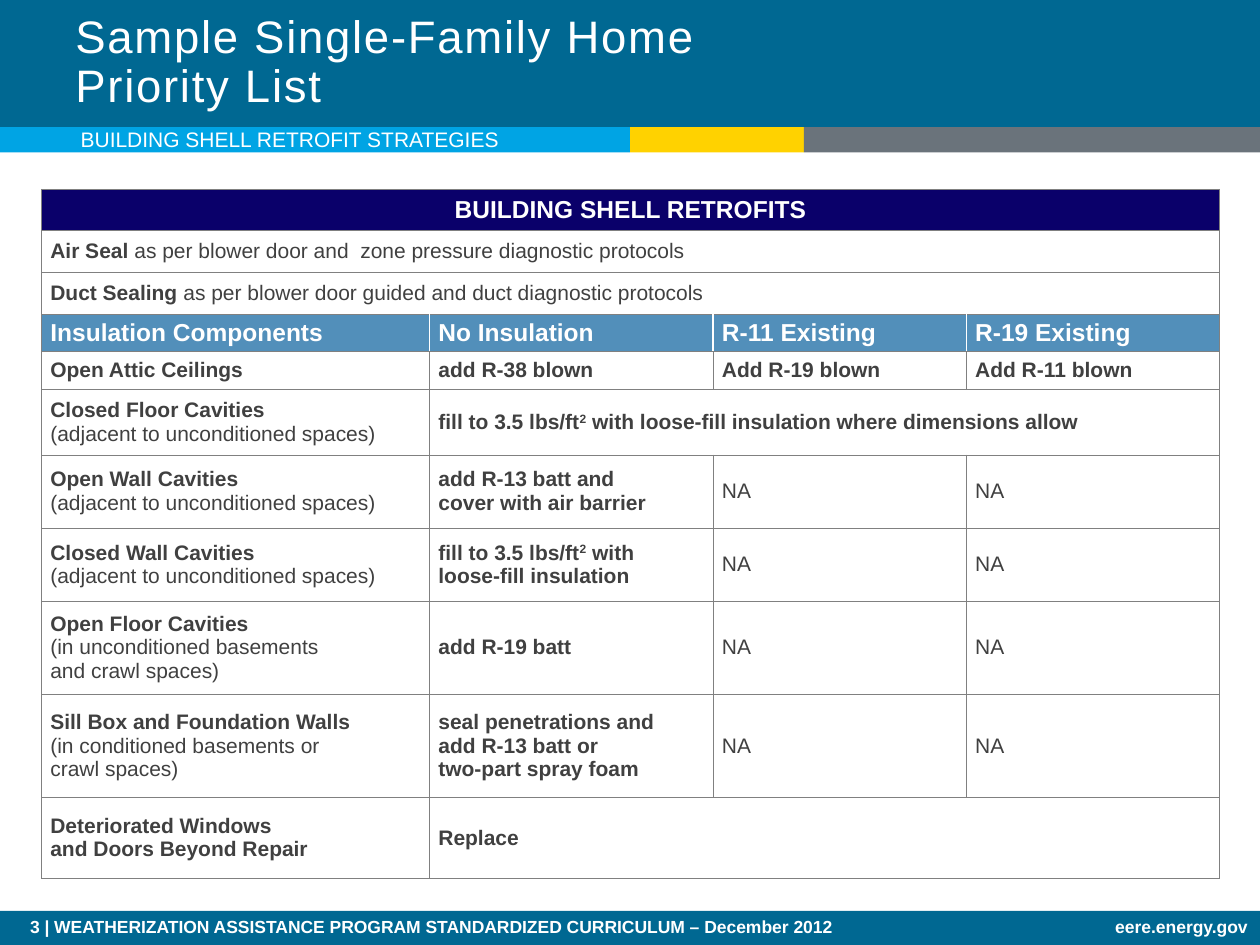
"""Build the sample priority list slide for single-family home retrofits."""
from lxml import etree
from pptx import Presentation
from pptx.dml.color import RGBColor
from pptx.enum import shapes, text
from pptx.oxml.ns import qn
from pptx.util import Inches, Pt

TEAL = RGBColor(0x00, 0x68, 0x92)
CYAN = RGBColor(0x00, 0xA4, 0xE4)
GOLD = RGBColor(0xFF, 0xD2, 0x00)
SLATE = RGBColor(0x6A, 0x73, 0x7B)
NAVY = RGBColor(0x0A, 0x00, 0x6A)
BLUE = RGBColor(0x52, 0x8F, 0xBA)
GRAY = RGBColor(0x80, 0x80, 0x80)
INK = RGBColor(0x40, 0x40, 0x40)
WHITE = RGBColor(0xFF, 0xFF, 0xFF)

COLS = [3.08, 2.25, 2.01, 2.01]
HEAD = 3
ROWS = [
    (0.33, ["*BUILDING SHELL RETROFITS*"]),
    (0.33, ["*Air Seal *as per blower door and  zone pressure diagnostic protocols"]),
    (0.33, ["*Duct Sealing *as per blower door guided and duct diagnostic protocols"]),
    (0.3, ["*Insulation Components*", "*No Insulation*", "*R-11 Existing*", "*R-19 Existing*"]),
    (0.3, ["*Open Attic Ceilings*", "*add R-38 blown*", "*Add R-19 blown*", "*Add R-11 blown*"]),
    (0.52, ["*Closed Floor Cavities*\v(adjacent to unconditioned spaces)",
            "*fill to 3.5 lbs/ft^2^ with loose-fill insulation where dimensions allow*"]),
    (0.58, ["*Open Wall Cavities*\n(adjacent to unconditioned spaces)",
            "*add R-13 batt and\vcover with air barrier*", "NA", "NA"]),
    (0.58, ["*Closed Wall Cavities*\n(adjacent to unconditioned spaces)",
            "*fill to 3.5 lbs/ft^2^ with\vloose-fill insulation*", "NA", "NA"]),
    (0.74, ["*Open Floor Cavities*\n(in unconditioned basements\vand crawl spaces)",
            "*add R-19 batt*", "NA", "NA"]),
    (0.82, ["*Sill Box and Foundation Walls*\n(in conditioned basements or\vcrawl spaces)",
            "*seal penetrations and\vadd R-13 batt or\vtwo-part spray foam*", "NA", "NA"]),
    (0.64, ["*Deteriorated Windows\vand Doors Beyond Repair*", "*Replace*"]),
]


def style(run, size, color, bold=False):
    """Set the font of a run."""
    font = run.font
    font.name, font.size, font.bold = "Arial", Pt(size), bold
    font.color.rgb = color


def add_bar(slide, left, top, width, height, color):
    """Add a plain filled bar."""
    bar = slide.shapes.add_shape(
        shapes.MSO_SHAPE.RECTANGLE, *map(Inches, (left, top, width, height)))
    bar.shadow.inherit = False
    bar.fill.solid()
    bar.fill.fore_color.rgb = color
    bar.line.fill.background()


def add_label(slide, words, place, size, bold=False, middle=False):
    """Add a white text box and return it."""
    box = slide.shapes.add_textbox(*map(Inches, place))
    frame = box.text_frame
    frame.word_wrap = True
    frame.text = words
    if middle:
        frame.vertical_anchor = text.MSO_ANCHOR.MIDDLE
    style(frame.paragraphs[0].runs[0], size, WHITE, bold)
    return box


def add_title(slide):
    """Add the slide title with open letter spacing."""
    box = add_label(slide, "Sample Single-Family Home Priority List",
                    (0.5, 0, 5.83, 1), 26, middle=True)
    para = box.text_frame.paragraphs[0]
    para.line_spacing = Pt(28)
    para.runs[0].font._element.set("spc", "100")


def add_foot(slide, words, place, align):
    """Add a footer text."""
    para = add_label(slide, words, place, 10, bold=True).text_frame.paragraphs[0]
    para.alignment, para.line_spacing = align, 0.9


def write(para, markup, size, color):
    """Write markup, with * for bold, ^ for superscript and \\v for a break."""
    bold = False
    for i, part in enumerate(markup.split("*")):
        bold = i % 2 == 1
        for j, piece in enumerate(part.split("^")):
            for k, line in enumerate(piece.split("\v")):
                if k:
                    para.add_line_break()
                if line:
                    run = para.add_run()
                    run.text = line
                    style(run, size, color, bold)
                    if j % 2:
                        run.font._element.set("baseline", "30000")


def edge(cell, side, color, width):
    """Draw one border of a cell."""
    line = etree.SubElement(cell._tc.get_or_add_tcPr(), qn("a:ln" + side), w=str(Pt(width)))
    fill = etree.SubElement(line, qn("a:solidFill"))
    etree.SubElement(fill, qn("a:srgbClr"), val=str(color))


def dress(cell, row, col):
    """Set the borders, fill and margins of a cell."""
    last = len(COLS) - 1
    for side in "LRTB":
        inner = (side == "L" and col > 0) or (side == "R" and col < last)
        edge(cell, side, *((WHITE, 1) if row == HEAD and inner else (GRAY, 0.25)))
    shade = {0: NAVY, HEAD: BLUE}.get(row)
    if shade is None:
        cell.fill.background()
    else:
        cell.fill.solid()
        cell.fill.fore_color.rgb = shade
    cell.margin_left = cell.margin_right = Inches(0.07)
    cell.margin_top = cell.margin_bottom = 0
    cell.vertical_anchor = text.MSO_ANCHOR.MIDDLE


def fill_cell(cell, row, markup):
    """Write the paragraphs of a cell."""
    size, color = (14, WHITE) if row in (0, HEAD) else (12, INK)
    frame = cell.text_frame
    for i, words in enumerate(markup.split("\n")):
        para = frame.add_paragraph() if i else frame.paragraphs[0]
        if row == 0:
            para.alignment = text.PP_ALIGN.CENTER
        write(para, words, size, color)


def add_grid(slide):
    """Add the table of retrofits, its last given cell spanning the rest of a row."""
    height = sum(high for high, _ in ROWS)
    grid = slide.shapes.add_table(
        len(ROWS), len(COLS),
        *map(Inches, (0.33, 1.5, sum(COLS), height))).table
    grid.first_row = grid.horz_banding = False
    for col, wide in enumerate(COLS):
        grid.columns[col].width = Inches(wide)
    for row, (high, cells) in enumerate(ROWS):
        grid.rows[row].height = Inches(high)
        for col in range(len(COLS)):
            dress(grid.cell(row, col), row, col)
        if len(cells) < len(COLS):
            grid.cell(row, len(cells) - 1).merge(grid.cell(row, len(COLS) - 1))
        for col, markup in enumerate(cells):
            fill_cell(grid.cell(row, col), row, markup)


def main():
    """Build and save the slide."""
    deck = Presentation()
    deck.slide_width, deck.slide_height = Inches(10), Inches(7.5)
    slide = deck.slides.add_slide(deck.slide_layouts[6])
    add_bar(slide, 0, 0, 10, 1.01, TEAL)
    add_bar(slide, 0, 7.23, 10, 0.27, TEAL)
    for left, width, color in ((0, 5, CYAN), (5, 1.38, GOLD), (6.38, 3.62, SLATE)):
        add_bar(slide, left, 1.01, width, 0.2, color)
    add_foot(slide, "3 | WEATHERIZATION ASSISTANCE PROGRAM STANDARDIZED CURRICULUM – December 2012",
             (0.14, 7.24, 7.97, 0.26), text.PP_ALIGN.LEFT)
    add_foot(slide, "eere.energy.gov", (5.99, 7.24, 4.01, 0.26), text.PP_ALIGN.RIGHT)
    add_grid(slide)
    add_title(slide)
    frame = add_label(slide, "BUILDING SHELL RETROFIT STRATEGIES",
                      (0.64, 0.98, 6.92, 0.25), 12, middle=True).text_frame
    frame.margin_left = frame.margin_right = frame.margin_top = frame.margin_bottom = 0
    deck.save("out.pptx")


if __name__ == "__main__":
    main()
